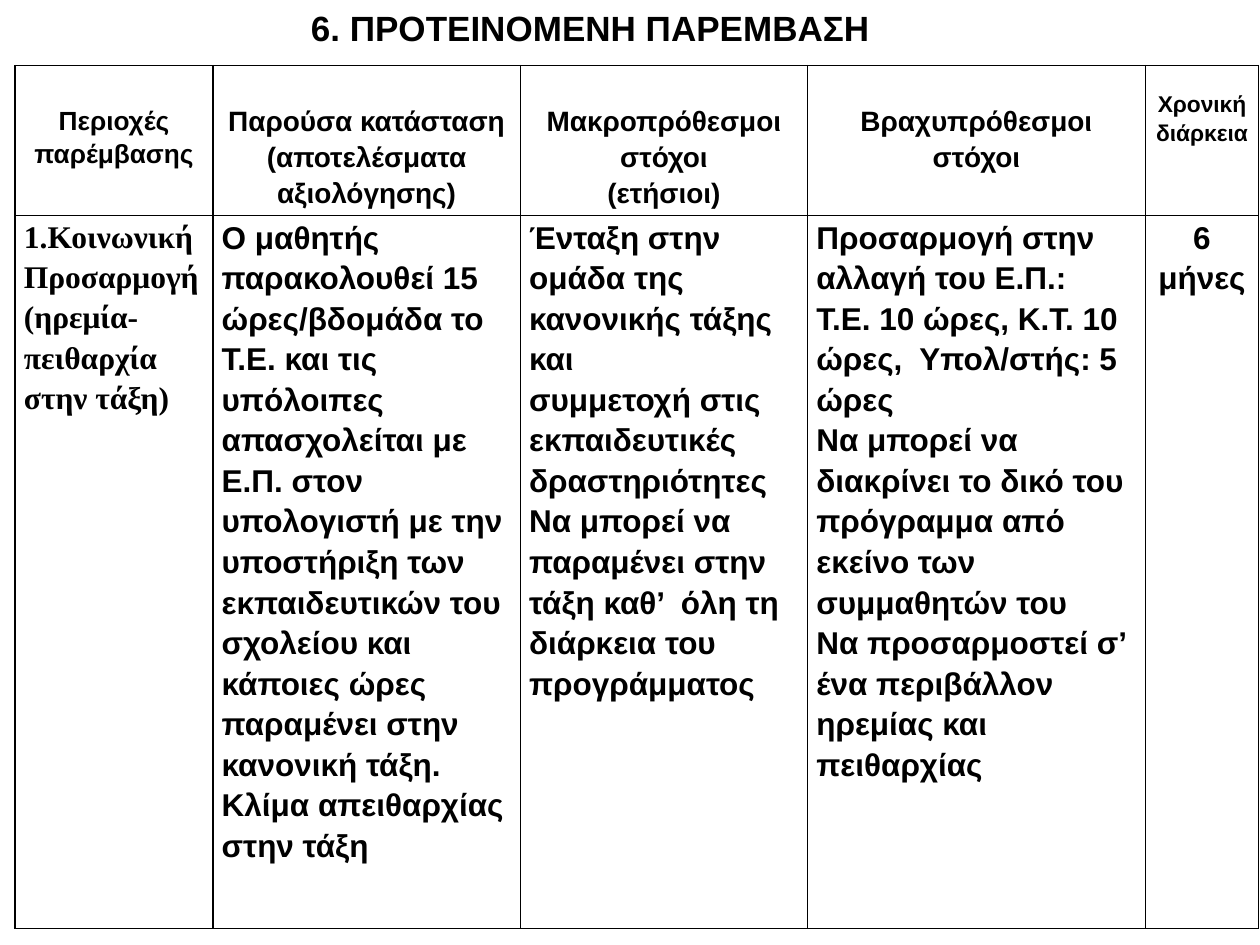
from pptx import Presentation
from pptx.dml.color import RGBColor
from pptx.enum.text import MSO_AUTO_SIZE, PP_ALIGN
from pptx.oxml.ns import qn
from pptx.util import Inches, Pt
from lxml.etree import SubElement

BLACK = RGBColor(0, 0, 0)
SANS, SERIF = "Arial", "Times New Roman"
COLUMN_WIDTHS = [1.57, 2.44, 2.28, 2.68, 0.9]
ROW_HEIGHTS = [1.19, 5.66]

HEADINGS = [
    (["Περιοχές παρέμβασης"], 15, 0.29),
    (["Παρούσα κατάσταση", "(αποτελέσματα αξιολόγησης)"], 16, 0.29),
    (["Μακροπρόθεσμοι στόχοι", "(ετήσιοι)"], 16, 0.29),
    (["Βραχυπρόθεσμοι στόχοι"], 16, 0.29),
    (["Χρονική διάρκεια"], 13, 0.18),
]
GOALS = [
    (["1.Κοινωνική Προσαρμογή", "(ηρεμία-πειθαρχία στην τάξη)"], SERIF, PP_ALIGN.LEFT),
    (["Ο μαθητής παρακολουθεί 15 ώρες/βδομάδα το Τ.Ε. και τις υπόλοιπες "
      "απασχολείται με Ε.Π. στον υπολογιστή με την υποστήριξη των εκπαιδευτικών "
      "του σχολείου και κάποιες ώρες παραμένει στην κανονική τάξη.",
      "Κλίμα απειθαρχίας στην τάξη"], SANS, PP_ALIGN.LEFT),
    (["Ένταξη στην ομάδα της κανονικής τάξης και",
      "συμμετοχή στις εκπαιδευτικές δραστηριότητες",
      "Να μπορεί να παραμένει στην τάξη καθ’  όλη τη διάρκεια του προγράμματος"],
     SANS, PP_ALIGN.LEFT),
    (["Προσαρμογή στην αλλαγή του Ε.Π.:",
      "Τ.Ε. 10 ώρες, Κ.Τ. 10 ώρες,  Υπολ/στής: 5 ώρες",
      "Να μπορεί να διακρίνει το δικό του πρόγραμμα από εκείνο των συμμαθητών του",
      "Να προσαρμοστεί σ’ ένα περιβάλλον ηρεμίας και πειθαρχίας"],
     SANS, PP_ALIGN.LEFT),
    (["6 μήνες"], SANS, PP_ALIGN.CENTER),
]


def write(frame, lines, size, font, align, spacing):
    for index, line in enumerate(lines):
        para = frame.add_paragraph() if index else frame.paragraphs[0]
        para.alignment = align
        para.line_spacing = spacing
        span = para.add_run()
        span.text = line
        for name, value in {"name": font, "size": Pt(size), "bold": True}.items():
            setattr(span.font, name, value)
        span.font.color.rgb = BLACK


def style_cell(cell, top):
    margins = {"margin_left": 0.07, "margin_right": 0.07, "margin_top": top, "margin_bottom": 0}
    for name, value in margins.items():
        setattr(cell, name, Inches(value))
    properties = cell._tc.get_or_add_tcPr()
    for side in ("a:lnL", "a:lnR", "a:lnT", "a:lnB"):
        border = SubElement(properties, qn(side), w=str(Pt(1)))
        fill = SubElement(border, qn("a:solidFill"))
        SubElement(fill, qn("a:srgbClr"), val=str(BLACK))
    cell.fill.background()


deck = Presentation()
deck.slide_width, deck.slide_height = Inches(10), Inches(7.5)
page = deck.slides.add_slide(deck.slide_layouts[6])

table = page.shapes.add_table(
    len(ROW_HEIGHTS), len(COLUMN_WIDTHS), Inches(0.12), Inches(0.52),
    Inches(sum(COLUMN_WIDTHS)), Inches(sum(ROW_HEIGHTS))).table
table.first_row = table.horz_banding = False
for column, width in zip(table.columns, COLUMN_WIDTHS):
    column.width = Inches(width)
for row, height in zip(table.rows, ROW_HEIGHTS):
    row.height = Inches(height)

for index, (lines, size, top) in enumerate(HEADINGS):
    cell = table.cell(0, index)
    style_cell(cell, top)
    write(cell.text_frame, lines, size, SANS, PP_ALIGN.CENTER, 1.15)

for index, (lines, font, align) in enumerate(GOALS):
    cell = table.cell(1, index)
    style_cell(cell, 0)
    write(cell.text_frame, lines, 18, font, align, 1.15)

title = page.shapes.add_textbox(Inches(0.43), Inches(0), Inches(8.51), Inches(0.44))
title.text_frame.word_wrap = True
title.text_frame.auto_size = MSO_AUTO_SIZE.SHAPE_TO_FIT_TEXT
write(title.text_frame, ["6. ΠΡΟΤΕΙΝΟΜΕΝΗ ΠΑΡΕΜΒΑΣΗ"], 20, SANS, PP_ALIGN.CENTER, 1.0)

deck.save("out.pptx")
